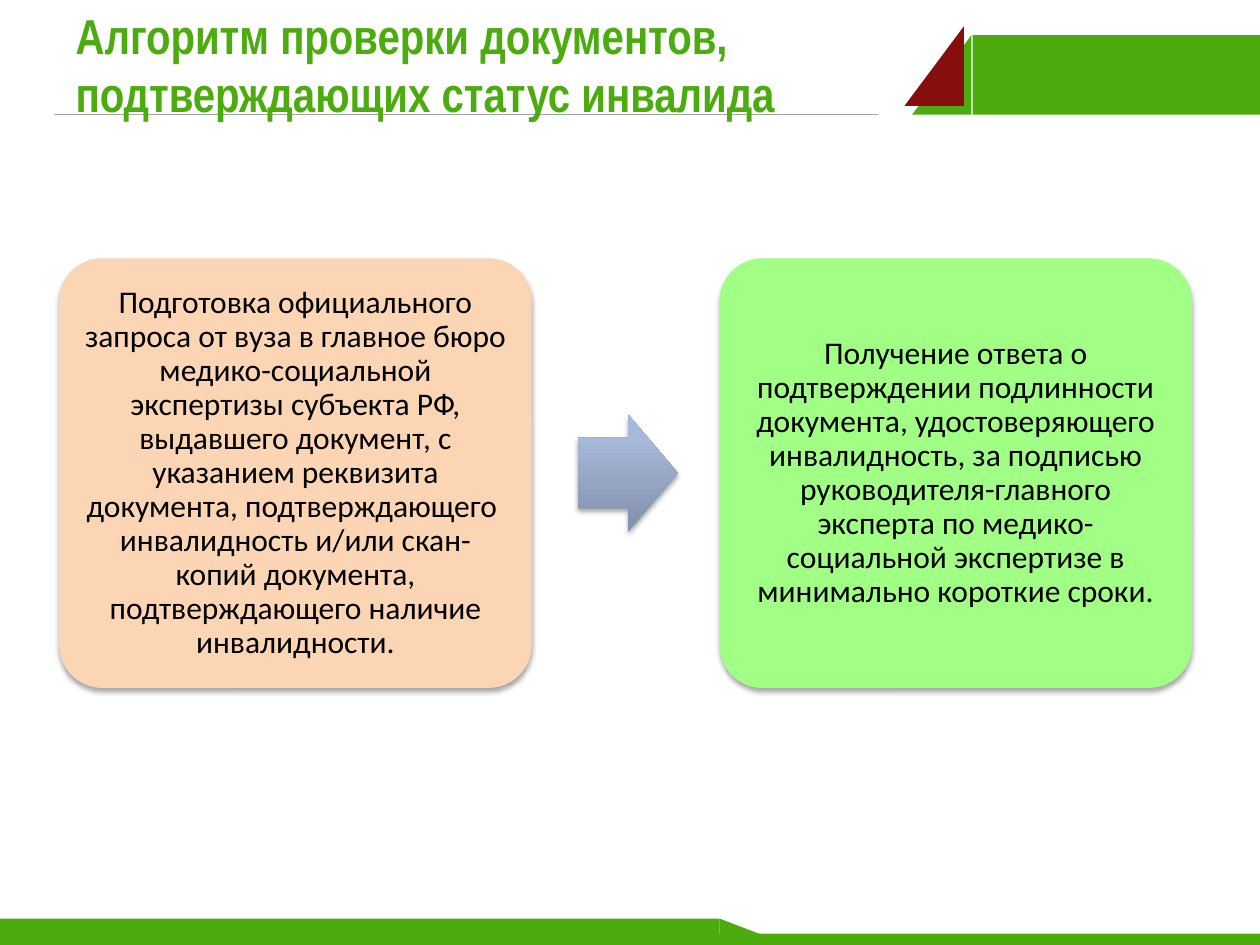
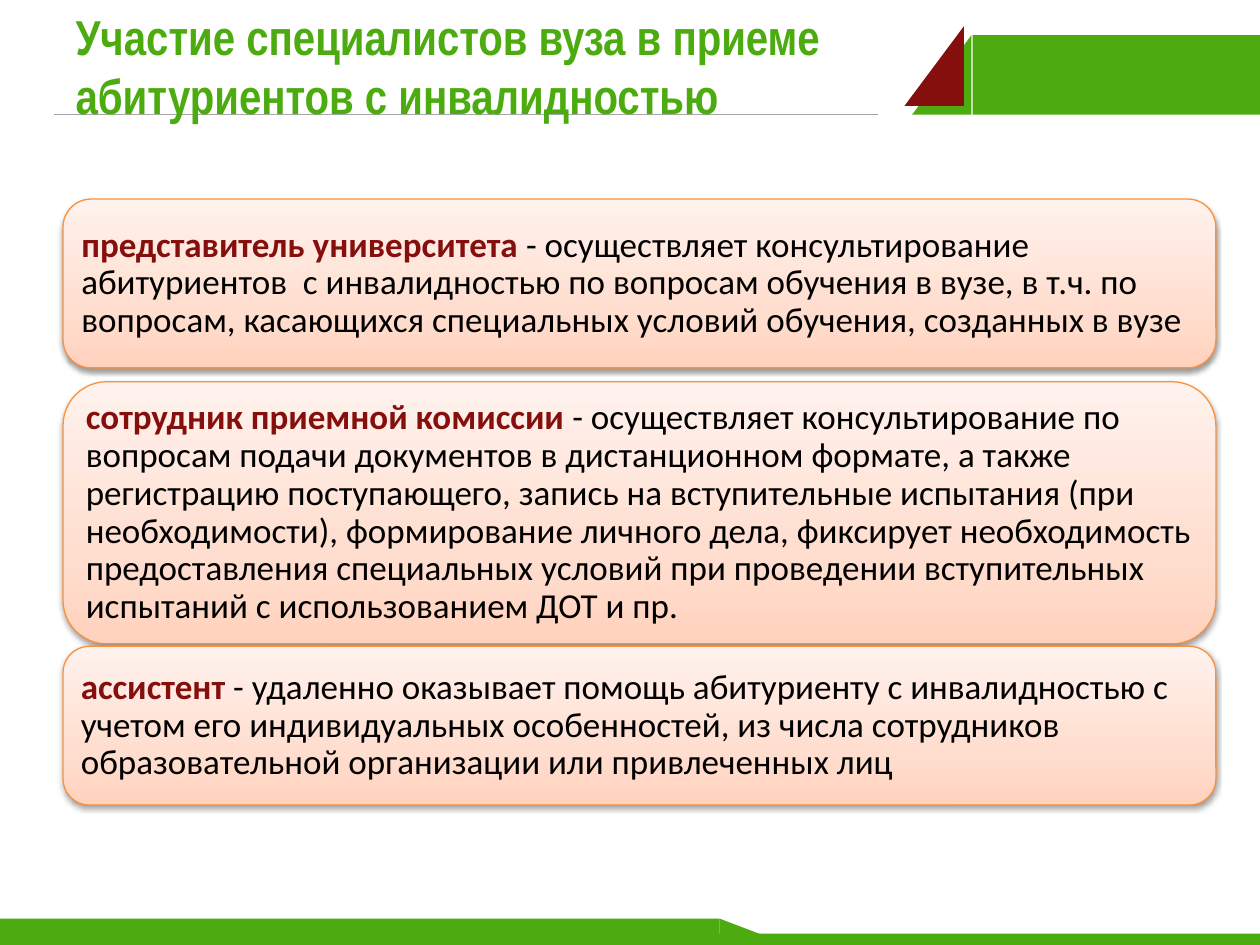
from lxml.etree import SubElement
from pptx import Presentation
from pptx.dml.color import RGBColor
from pptx.enum.shapes import MSO_CONNECTOR, MSO_SHAPE
from pptx.enum.text import MSO_ANCHOR, MSO_AUTO_SIZE, PP_ALIGN
from pptx.oxml.ns import qn
from pptx.util import Inches, Pt

GREEN = RGBColor(0x4B, 0xAB, 0x0F)
DARK_RED = RGBColor(0x85, 0x0F, 0x0D)
GREY = RGBColor(0xA6, 0xA6, 0xA6)
BLACK = RGBColor(0, 0, 0)
PEACH = RGBColor(0xFC, 0xD5, 0xB5)
LIGHT_GREEN = RGBColor(0xA2, 0xFF, 0x85)
ORANGE = RGBColor(0xF6, 0x92, 0x40)
ARROW_STOPS = [
    (0, RGBColor(0x81, 0x8F, 0xA8)),
    (80, RGBColor(0xA7, 0xB9, 0xDA)),
    (100, RGBColor(0xA7, 0xBA, 0xDC)),
]
CARD_STOPS = [
    (0, RGBColor(0xFF, 0xD2, 0xBD)),
    (35, RGBColor(0xFF, 0xDE, 0xD0)),
    (100, RGBColor(0xFF, 0xF2, 0xED)),
]
TITLE_FONT = "Arial Narrow"
BODY_FONT = "Calibri"

STEP_TOP, STEP_WIDTH, STEP_HEIGHT = 2.05, 3.75, 3.41
STEPS = [
    (0.47, PEACH, "Подготовка официального запроса от вуза в главное бюро "
     "медико-социальной экспертизы субъекта РФ, выдавшего документ, с указанием "
     "реквизита документа, подтверждающего  инвалидность и/или скан-копий "
     "документа, подтверждающего наличие инвалидности."),
    (5.71, LIGHT_GREEN, "Получение ответа о подтверждении подлинности документа, "
     "удостоверяющего инвалидность, за подписью руководителя-главного эксперта "
     "по медико-социальной экспертизе в минимально короткие сроки."),
]
SPECIALISTS = [
    (1.58, 1.34, "представитель университета ",
     "- осуществляет консультирование абитуриентов  с инвалидностью по вопросам "
     "обучения в вузе, в т.ч. по вопросам, касающихся специальных условий "
     "обучения, созданных в вузе"),
    (3.03, 2.08, "сотрудник приемной комиссии ",
     "- осуществляет консультирование по вопросам подачи документов в "
     "дистанционном формате, а также регистрацию поступающего, запись на "
     "вступительные испытания (при необходимости), формирование личного дела, "
     "фиксирует необходимость предоставления специальных условий при проведении "
     "вступительных испытаний с использованием ДОТ и пр."),
    (5.13, 1.26, "ассистент",
     " - удаленно оказывает помощь абитуриенту с инвалидностью с учетом его "
     "индивидуальных особенностей, из числа сотрудников образовательной "
     "организации или привлеченных лиц"),
]


def add_shape(slide, kind, left, top, width, height, color=None, flipped=False):
    shape = slide.shapes.add_shape(
        kind, Inches(left), Inches(top), Inches(width), Inches(height))
    shape.shadow.inherit = False
    shape.line.fill.background()
    if color is not None:
        shape.fill.solid()
        shape.fill.fore_color.rgb = color
    if flipped:
        shape.element.spPr.get_or_add_xfrm().set("flipH", "1")
    return shape


def fill_upward_gradient(shape, stops):
    shape.fill.gradient()
    shape.fill.gradient_angle = 90
    stop_list = shape.element.spPr.find(".//" + qn("a:gsLst"))
    for old_stop in list(stop_list):
        stop_list.remove(old_stop)
    for position, color in stops:
        stop = SubElement(stop_list, qn("a:gs"), pos=str(position * 1000))
        SubElement(stop, qn("a:srgbClr"), val=str(color))


def add_shadow(shape, opacity, distance):
    effects = shape.element.spPr.find(qn("a:effectLst"))
    shadow = SubElement(
        effects, qn("a:outerShdw"), blurRad=str(Pt(3.1)),
        dist=str(Pt(distance)), dir="5400000", rotWithShape="0")
    color = SubElement(shadow, qn("a:srgbClr"), val=str(BLACK))
    SubElement(color, qn("a:alpha"), val=str(opacity * 1000))


def add_run(paragraph, text, size, color, bold=False, font=BODY_FONT):
    run = paragraph.add_run()
    run.text = text
    run.font.name = font
    run.font.size = Pt(size)
    run.font.bold = bold
    run.font.color.rgb = color


def prepare_text(shape, inset, alignment):
    frame = shape.text_frame
    frame.word_wrap = True
    frame.vertical_anchor = MSO_ANCHOR.MIDDLE
    frame.margin_left = frame.margin_right = Inches(inset)
    frame.margin_top = frame.margin_bottom = Inches(inset)
    paragraph = frame.paragraphs[0]
    paragraph.alignment = alignment
    paragraph.line_spacing = 0.9
    return paragraph


def add_title_rule(slide):
    rule = slide.shapes.add_connector(
        MSO_CONNECTOR.STRAIGHT, Inches(0.43), Inches(0.91), Inches(6.97), Inches(0.91))
    rule.line.color.rgb = GREY
    rule.line.width = Pt(0.75)
    SubElement(rule.element.spPr, qn("a:effectLst"))


def add_bands(slide):
    rectangle, triangle = MSO_SHAPE.RECTANGLE, MSO_SHAPE.RIGHT_TRIANGLE
    add_shape(slide, rectangle, 7.72, 0.28, 2.28, 0.63, GREEN)
    add_shape(slide, triangle, 7.24, 0.28, 0.47, 0.63, GREEN, flipped=True)
    add_shape(slide, rectangle, 0, 7.29, 5.71, 0.21, GREEN)
    add_shape(slide, triangle, 5.71, 7.29, 0.55, 0.21, GREEN)
    add_shape(slide, rectangle, 2.4, 7.41, 7.6, 0.09, GREEN)
    add_shape(slide, triangle, 7.18, 0.21, 0.47, 0.63, DARK_RED, flipped=True)


def place_title(slide, text, top, width):
    title = slide.shapes.title
    title.left, title.top = Inches(0.5), Inches(top)
    title.width, title.height = Inches(width), Inches(1.25)
    frame = title.text_frame
    frame.auto_size = MSO_AUTO_SIZE.NONE
    frame.word_wrap = True
    frame.vertical_anchor = MSO_ANCHOR.TOP
    paragraph = frame.paragraphs[0]
    paragraph.alignment = PP_ALIGN.LEFT
    add_run(paragraph, text, 28, GREEN, bold=True, font=TITLE_FONT)
    slide.shapes.element.append(title.element)


def add_framed_slide(presentation, title, title_top, title_width):
    slide = presentation.slides.add_slide(presentation.slide_layouts[5])
    add_title_rule(slide)
    add_bands(slide)
    place_title(slide, title, title_top, title_width)
    return slide


def add_step(slide, left, color, text):
    step = add_shape(slide, MSO_SHAPE.ROUNDED_RECTANGLE,
                     left, STEP_TOP, STEP_WIDTH, STEP_HEIGHT, color)
    step.adjustments[0] = 0.1
    add_shadow(step, 35, 1.8)
    add_run(prepare_text(step, 0.07, PP_ALIGN.CENTER), text, 18, BLACK)


def add_step_arrow(slide):
    arrow = add_shape(slide, MSO_SHAPE.RIGHT_ARROW, 4.59, 3.29, 0.79, 0.93)
    arrow.adjustments[0] = 0.6
    arrow.adjustments[1] = 0.5
    fill_upward_gradient(arrow, ARROW_STOPS)
    add_shadow(arrow, 35, 1.8)


def add_specialist_card(slide, top, height, role, duties):
    card = add_shape(slide, MSO_SHAPE.ROUNDED_RECTANGLE, 0.5, top, 9.15, height)
    fill_upward_gradient(card, CARD_STOPS)
    card.line.color.rgb = ORANGE
    card.line.width = Pt(0.75)
    add_shadow(card, 38, 1.6)
    paragraph = prepare_text(card, 0.08, PP_ALIGN.LEFT)
    add_run(paragraph, role, 20, DARK_RED, bold=True)
    add_run(paragraph, duties, 20, BLACK)


def main():
    presentation = Presentation()
    presentation.slide_width = Inches(10)
    presentation.slide_height = Inches(7.5)

    slide = add_framed_slide(
        presentation, "Алгоритм проверки документов, подтверждающих статус инвалида",
        -0.01, 7.26)
    for left, color, text in STEPS:
        add_step(slide, left, color, text)
    add_step_arrow(slide)

    slide = add_framed_slide(
        presentation, "Участие специалистов вуза в приеме абитуриентов с инвалидностью",
        0, 7.65)
    for top, height, role, duties in SPECIALISTS:
        add_specialist_card(slide, top, height, role, duties)

    presentation.save("out.pptx")


if __name__ == "__main__":
    main()
